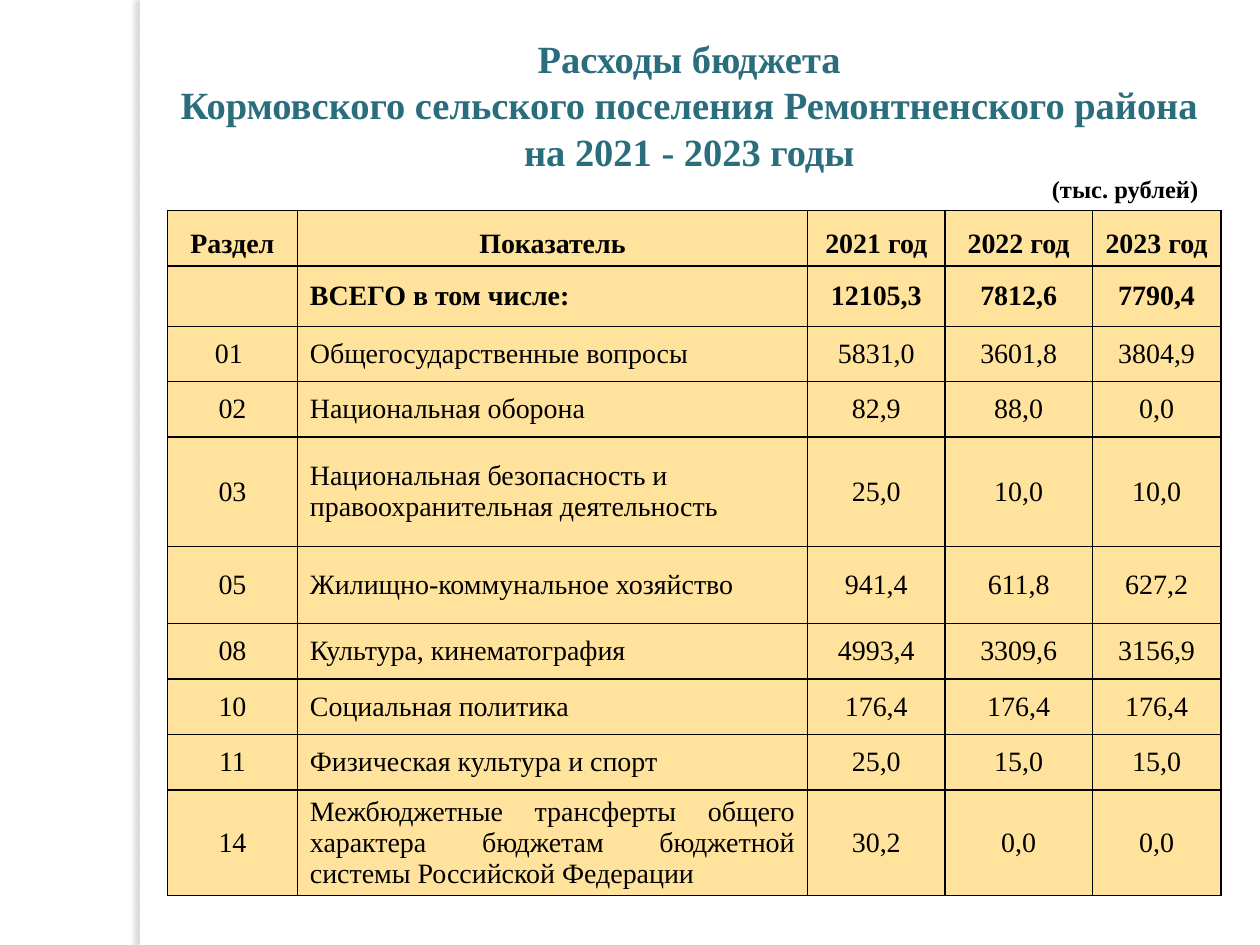
from dataclasses import dataclass

from lxml import etree
from pptx import Presentation
from pptx.dml.color import RGBColor
from pptx.enum import shapes, text
from pptx.oxml import ns
from pptx.util import Inches, Pt

ALIGN, ANCHOR = text.PP_ALIGN, text.MSO_ANCHOR


@dataclass(frozen=True)
class Theme:
    face: str = "Times New Roman"
    title: str = "2A6D7D"
    ink: str = "000000"
    cell: str = "FFE39D"
    paper: str = "FFFFFF"
    shade: str = "736F63"
    head: int = 22
    unit: int = 14
    body: int = 16


@dataclass(frozen=True)
class Row:
    code: str
    name: str
    sums: tuple[str, str, str]
    height: float = 0.44
    bold: bool = False
    align: ALIGN = ALIGN.LEFT
    hang: bool = True
    top: bool = False


THEME = Theme()
HANG = Inches(0.38)
COLS = (1.03, 4.05, 1.09, 1.17, 1.02)
ROWS = (
    Row("Раздел", "Показатель", ("2021 год", "2022 год", "2023 год"),
        bold=True, align=ALIGN.CENTER, top=True),
    Row("", "ВСЕГО в том числе:", ("12105,3", "7812,6", "7790,4"), 0.48, bold=True),
    Row("01 ", "Общегосударственные вопросы", ("5831,0", "3601,8", "3804,9")),
    Row("02", "Национальная оборона", ("82,9", "88,0", "0,0")),
    Row("03", "Национальная безопасность и правоохранительная деятельность",
        ("25,0", "10,0", "10,0"), 0.87, hang=False),
    Row("05", "Жилищно-коммунальное хозяйство", ("941,4", "611,8", "627,2"), 0.61),
    Row("08", "Культура, кинематография", ("4993,4", "3309,6", "3156,9")),
    Row("10", "Социальная политика", ("176,4", "176,4", "176,4")),
    Row("11", "Физическая культура и спорт", ("25,0", "15,0", "15,0")),
    Row("14", "Межбюджетные трансферты общего характера бюджетам бюджетной "
        "системы Российской Федерации", ("30,2", "0,0", "0,0"),
        align=ALIGN.JUSTIFY, hang=False),
)


def add(parent, tag: str, **attrs):
    return etree.SubElement(parent, ns.qn(tag), attrs)


def write(para, words: str, size: int, color: str, bold: bool, align: ALIGN) -> None:
    para.text = words
    para.alignment = align
    font = para.font
    font.name, font.size, font.bold = THEME.face, Pt(size), bold
    font.color.rgb = RGBColor.from_string(color)


def border(cell) -> None:
    props = cell._tc.get_or_add_tcPr()
    for side in "LRTB":
        line = add(props, f"a:ln{side}", w=str(Pt(1)))
        add(add(line, "a:solidFill"), "a:srgbClr", val=THEME.ink)


def fill_cell(cell, words: str, row: Row, col: int) -> None:
    border(cell)
    cell.fill.solid()
    cell.fill.fore_color.rgb = RGBColor.from_string(THEME.cell)
    cell.vertical_anchor = ANCHOR.BOTTOM if row.top else ANCHOR.MIDDLE
    label = col < 2 or row.top
    cell.margin_left = cell.margin_right = Inches(0.1 if label else 0.07)
    cell.margin_top = cell.margin_bottom = Inches(0.05 if label else 0)
    if not words:
        return
    para = cell.text_frame.paragraphs[0]
    align = row.align if col == 1 else ALIGN.CENTER
    write(para, words, THEME.body, THEME.ink, row.bold, align)
    if label and (row.hang or col != 1):
        props = para._p.get_or_add_pPr()
        props.set("marL", str(HANG))
        props.set("indent", str(-HANG))


def add_strip(slide) -> None:
    strip = slide.shapes.add_shape(shapes.MSO_SHAPE.RECTANGLE, Inches(1.11), 0,
                                   Inches(0.08), Inches(7.5))
    strip.fill.solid()
    strip.fill.fore_color.rgb = RGBColor.from_string(THEME.paper)
    strip.line.fill.background()
    strip.shadow.inherit = False
    glow = add(strip._element.spPr.find(ns.qn("a:effectLst")), "a:outerShdw",
               blurRad=str(Pt(3)), dist=str(Pt(3)), dir="10800000", rotWithShape="0")
    add(add(glow, "a:srgbClr", val=THEME.shade), "a:alpha", val="25000")


def add_grid(slide) -> None:
    frame = slide.shapes.add_table(len(ROWS), len(COLS), Inches(1.33), Inches(1.67),
                                   Inches(sum(COLS)), Inches(sum(r.height for r in ROWS)))
    grid = frame.table
    grid.first_row = grid.horz_banding = False
    for col, width in zip(grid.columns, COLS):
        col.width = Inches(width)
    for i, row in enumerate(ROWS):
        grid.rows[i].height = Inches(row.height)
        for j, words in enumerate((row.code, row.name, *row.sums)):
            fill_cell(grid.cell(i, j), words, row, j)


def add_title(slide) -> None:
    box = slide.shapes.add_textbox(Inches(1.33), Inches(0.23), Inches(8.28), Inches(1.75))
    frame = box.text_frame
    frame.word_wrap = True
    write(frame.paragraphs[0], "Расходы бюджета\vКормовского сельского поселения "
          "Ремонтненского района на 2021 - 2023 годы",
          THEME.head, THEME.title, True, ALIGN.CENTER)
    write(frame.add_paragraph(), "(тыс. рублей)",
          THEME.unit, THEME.ink, True, ALIGN.RIGHT)


def main() -> None:
    deck = Presentation()
    deck.slide_width, deck.slide_height = Inches(10), Inches(7.5)
    slide = deck.slides.add_slide(deck.slide_layouts[6])
    # Side strip, then the budget table and its heading
    add_strip(slide)
    add_grid(slide)
    add_title(slide)
    deck.save("out.pptx")


if __name__ == "__main__":
    main()
